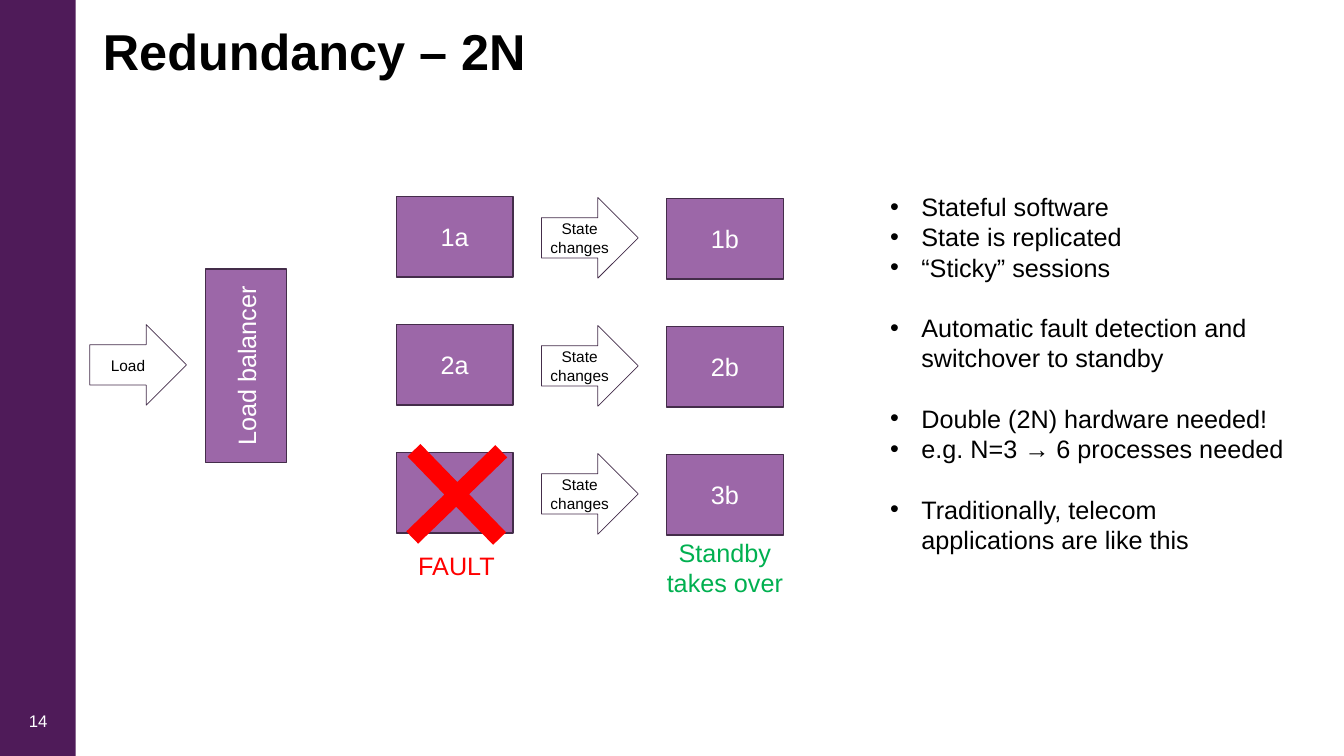
from lxml import etree
from pptx import Presentation
from pptx.dml.color import RGBColor
from pptx.enum.shapes import MSO_SHAPE
from pptx.enum.text import MSO_ANCHOR, PP_ALIGN
from pptx.oxml.ns import qn
from pptx.util import Inches, Pt

RECTANGLE, ARROW, CROSS = MSO_SHAPE.RECTANGLE, MSO_SHAPE.RIGHT_ARROW, MSO_SHAPE.CROSS
LEFT, CENTER, RIGHT = PP_ALIGN.LEFT, PP_ALIGN.CENTER, PP_ALIGN.RIGHT
TOP, MIDDLE = MSO_ANCHOR.TOP, MSO_ANCHOR.MIDDLE

FONT = "Arial"
COLORS = {
    "sidebar": "4F1B59",
    "process": "9C67A8",
    "outline": "442D4A",
    "text": "000000",
    "light": "FFFFFF",
    "fault": "FF0000",
    "standby": "00B050",
}
PROCESS_WIDTH, ARROW_WIDTH, ROW_HEIGHT, ROW_STEP = 1.16, 0.96, 0.8, 1.27
BULLET_GROUPS = [
    ["Stateful software", "State is replicated", "“Sticky” sessions"],
    ["Automatic fault detection and switchover to standby"],
    ["Double (2N) hardware needed!", "e.g. N=3 → 6 processes needed"],
    ["Traditionally, telecom applications are like this"],
]


def rgb(name):
    """Return the named palette colour."""
    return RGBColor.from_string(COLORS[name])


def write_text(frame, paragraphs, size=18, color="text", align=LEFT, anchor=TOP,
               bold=False, wrap=True, inset=None, spacing=None, bullet=False):
    """Fill a text frame from pairs of text and space before in points."""
    frame.word_wrap = wrap
    frame.vertical_anchor = anchor
    if inset is not None:
        frame.margin_left = frame.margin_right = Inches(inset)
        frame.margin_top = frame.margin_bottom = Inches(inset)
    for index, (text, gap) in enumerate(paragraphs):
        paragraph = frame.add_paragraph() if index else frame.paragraphs[0]
        paragraph.alignment = align
        if gap:
            paragraph.space_before = Pt(gap)
        if spacing:
            paragraph.line_spacing = spacing
        if bullet:
            properties = paragraph._p.get_or_add_pPr()
            properties.set("marL", str(Inches(0.31)))
            properties.set("indent", str(Inches(-0.31)))
            etree.SubElement(properties, qn("a:buFont"), typeface=FONT)
            etree.SubElement(properties, qn("a:buChar"), char="•")
        run = paragraph.add_run()
        run.text = text
        run.font.name, run.font.size, run.font.bold = FONT, Pt(size), bold
        run.font.color.rgb = rgb(color)


def add_block(slide, kind, box, fill=None, line_width=None, rotation=0):
    """Add a flat preset shape in the given box."""
    block = slide.shapes.add_shape(kind, *map(Inches, box))
    block.shadow.inherit = False
    block.rotation = rotation
    if fill:
        block.fill.solid()
        block.fill.fore_color.rgb = rgb(fill)
    else:
        block.fill.background()
    if line_width:
        block.line.color.rgb = rgb("outline")
        block.line.width = Pt(line_width)
    else:
        block.line.fill.background()
    return block


def add_label(slide, box, paragraphs, **text_format):
    """Add a text box in the given box."""
    label = slide.shapes.add_textbox(*map(Inches, box))
    write_text(label.text_frame, paragraphs, **text_format)


def add_process(slide, box, name, rotation=0):
    """Add a purple box with a centred name."""
    process = add_block(slide, RECTANGLE, box, "process", 1, rotation)
    write_text(process.text_frame, [(name, 0)], color="light", align=CENTER, anchor=MIDDLE)


def add_flow(slide, left, top, name):
    """Add an outlined arrow with a small centred name."""
    flow = add_block(slide, ARROW, (left, top, ARROW_WIDTH, ROW_HEIGHT), line_width=0.5)
    write_text(flow.text_frame, [(name, 0)], size=11, align=CENTER, anchor=MIDDLE, inset=0)


def add_sidebar(slide, width, height):
    """Draw the purple sidebar with its page number."""
    add_block(slide, RECTANGLE, (0, 0, width, height), "sidebar")
    add_label(slide, (0.12, height - 0.55, 0.45, 0.4), [("14", 0)],
              size=12, color="light", align=RIGHT, anchor=MIDDLE)


def add_title(slide, box):
    """Place and format the title placeholder."""
    title = slide.shapes.title
    title.left, title.top, title.width, title.height = map(Inches, box)
    write_text(title.text_frame, [("Redundancy – 2N", 0)], size=36, bold=True,
               anchor=MIDDLE, spacing=0.9)


def add_load_balancer(slide, left, top):
    """Draw the incoming load and the upright balancer beside it."""
    add_flow(slide, left, top, "Load")
    add_process(slide, (left + 0.59, top + 0.01, 1.92, ROW_HEIGHT), "Load balancer", 270)


def add_process_pairs(slide, left, top):
    """Draw the rows of active and standby processes."""
    for row in range(3):
        row_top = top + row * ROW_STEP
        add_process(slide, (left, row_top, PROCESS_WIDTH, ROW_HEIGHT), f"{row + 1}a")
        add_flow(slide, left + 1.44, row_top + 0.01, "State changes")
        add_process(slide, (left + 2.68, row_top + 0.02, PROCESS_WIDTH, ROW_HEIGHT),
                    f"{row + 1}b")


def add_fault(slide, left, top):
    """Cross out the failed process and label the switchover."""
    cross = add_block(slide, CROSS, (left - 0.01, top - 0.2, 1.22, 1.23), "fault", rotation=45.9)
    cross.adjustments[0] = 0.431
    add_label(slide, (left + 0.12, top + 0.92, 0.97, 0.4), [("FAULT", 0)],
              color="fault", wrap=False)
    add_label(slide, (left + 2.48, top + 0.79, 1.56, 0.71), [("Standby takes over", 0)],
              color="standby", align=CENTER)


def add_notes_list(slide, box):
    """Write the bullet groups with a line of space between them."""
    bullets = [(text, 21.6 if group and not item else 0)
               for group, texts in enumerate(BULLET_GROUPS)
               for item, text in enumerate(texts)]
    add_label(slide, box, bullets, bullet=True)


def main():
    """Build and save the redundancy slide."""
    deck = Presentation()
    deck.slide_width, deck.slide_height = Inches(13.33), Inches(7.5)
    slide = deck.slides.add_slide(deck.slide_layouts[5])
    add_sidebar(slide, 0.75, 7.5)
    add_title(slide, (0.92, 0.2, 12.18, 0.68))
    add_load_balancer(slide, 0.89, 3.22)
    add_process_pairs(slide, 3.93, 1.95)
    add_fault(slide, 3.93, 1.95 + 2 * ROW_STEP)
    add_notes_list(slide, (8.73, 1.85, 4.21, 3.74))
    deck.save("out.pptx")


if __name__ == "__main__":
    main()
